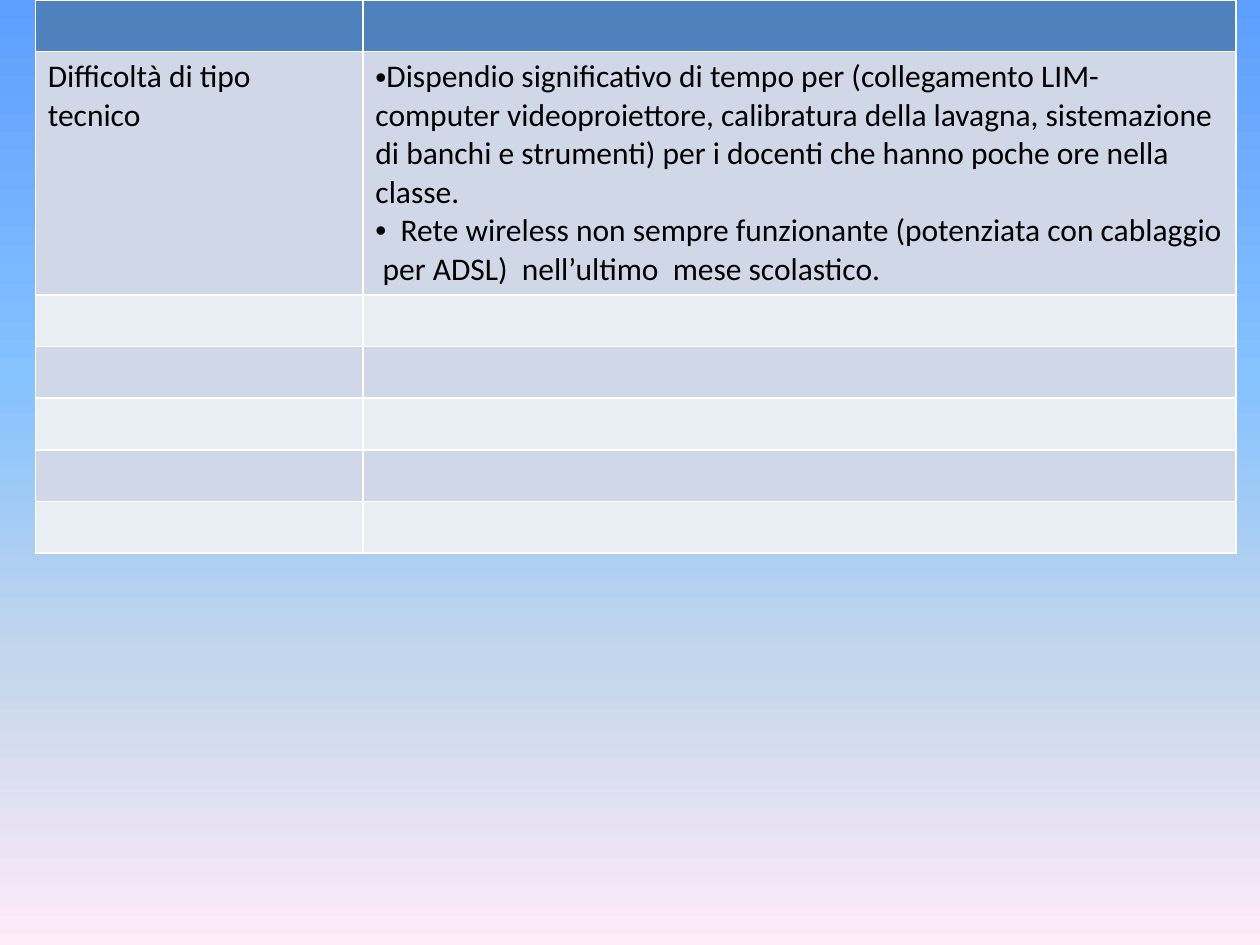
from copy import deepcopy

from lxml.etree import SubElement
from pptx import Presentation
from pptx.dml.color import RGBColor
from pptx.oxml.ns import qn
from pptx.util import Inches, Pt

WIDE, HIGH = 10, 7.5
HEAD = RGBColor(0x4F, 0x81, 0xBD)
BANDS = RGBColor(0xD0, 0xD8, 0xE8), RGBColor(0xE9, 0xED, 0xF4)
BLACK = RGBColor(0, 0, 0)
SKY = [
    (0, RGBColor(0x5E, 0x9E, 0xFF)),
    (0.4, RGBColor(0x85, 0xC2, 0xFF)),
    (0.7, RGBColor(0xC4, 0xD6, 0xEB)),
    (1, RGBColor(0xFF, 0xEB, 0xFA)),
]
ROWS, ROW_HIGH, TEXT_HIGH = 7, 0.41, 1.92
COLS = 2.6, 6.93
TOPIC = "Difficoltà di tipo tecnico"
POINTS = [
    "Dispendio significativo di tempo per (collegamento LIM- computer "
    "videoproiettore, calibratura della lavagna, sistemazione di banchi e "
    "strumenti) per i docenti che hanno poche ore nella classe.",
    "  Rete wireless non sempre funzionante (potenziata con cablaggio  per "
    "ADSL)  nell’ultimo  mese scolastico.",
]


def paint_sky(slide):
    """Fill the background with the vertical gradient."""
    fill = slide.background.fill
    fill.gradient()
    fill.gradient_angle = 270
    stops = slide.element.find(".//" + qn("a:gsLst"))
    for _ in range(len(SKY) - len(stops)):
        stops.append(deepcopy(stops[0]))
    for stop, (place, color) in zip(fill.gradient_stops, SKY):
        stop.position = place
        stop.color.rgb = color


def add_grid(slide):
    """Add the banded table with a header row and return it."""
    frame = slide.shapes.add_table(
        ROWS, len(COLS), Inches(0.28), 0, Inches(sum(COLS)), Inches(ROWS * ROW_HIGH)
    )
    table = frame.table
    for col, width in zip(table.columns, COLS):
        col.width = Inches(width)
    for i, row in enumerate(table.rows):
        row.height = Inches(TEXT_HIGH if i == 1 else ROW_HIGH)
        for cell in row.cells:
            cell.fill.solid()
            cell.fill.fore_color.rgb = BANDS[(i - 1) % 2] if i else HEAD
    return table


def write_cell(cell, lines, bullet=False):
    """Write one paragraph per line, with bullets if asked."""
    frame = cell.text_frame
    for i, line in enumerate(lines):
        para = frame.add_paragraph() if i else frame.paragraphs[0]
        run = para.add_run()
        run.text = line
        run.font.name = "Calibri"
        run.font.size = Pt(18)
        run.font.color.rgb = BLACK
        if bullet:
            props = para._p.get_or_add_pPr()
            SubElement(props, qn("a:buFont"), typeface="Arial")
            SubElement(props, qn("a:buChar"), char="•")


def main():
    """Build the slide and save it."""
    deck = Presentation()
    deck.slide_width, deck.slide_height = Inches(WIDE), Inches(HIGH)
    slide = deck.slides.add_slide(deck.slide_layouts[6])
    paint_sky(slide)
    table = add_grid(slide)
    write_cell(table.cell(1, 0), [TOPIC])
    write_cell(table.cell(1, 1), POINTS, bullet=True)
    deck.save("out.pptx")


if __name__ == "__main__":
    main()
